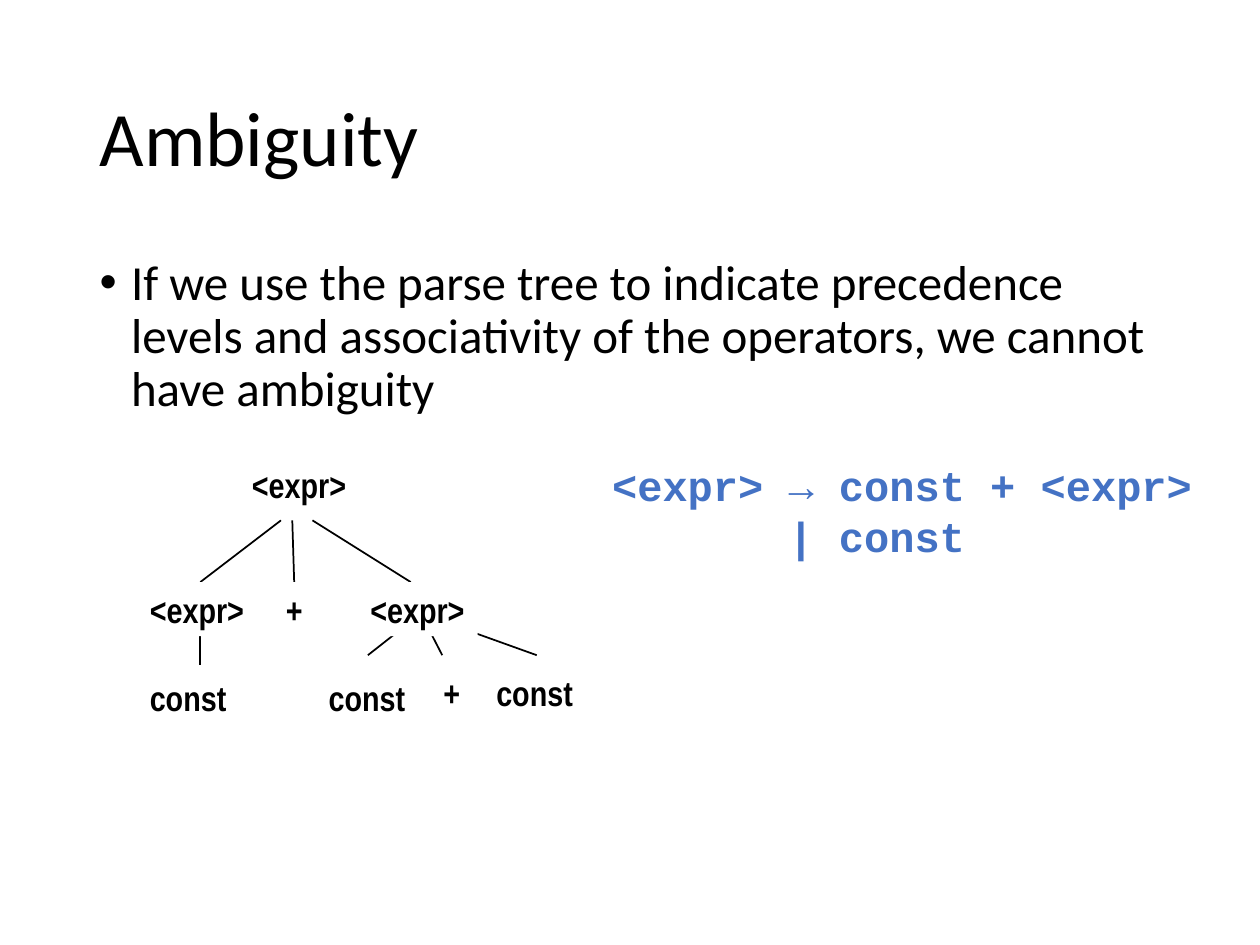
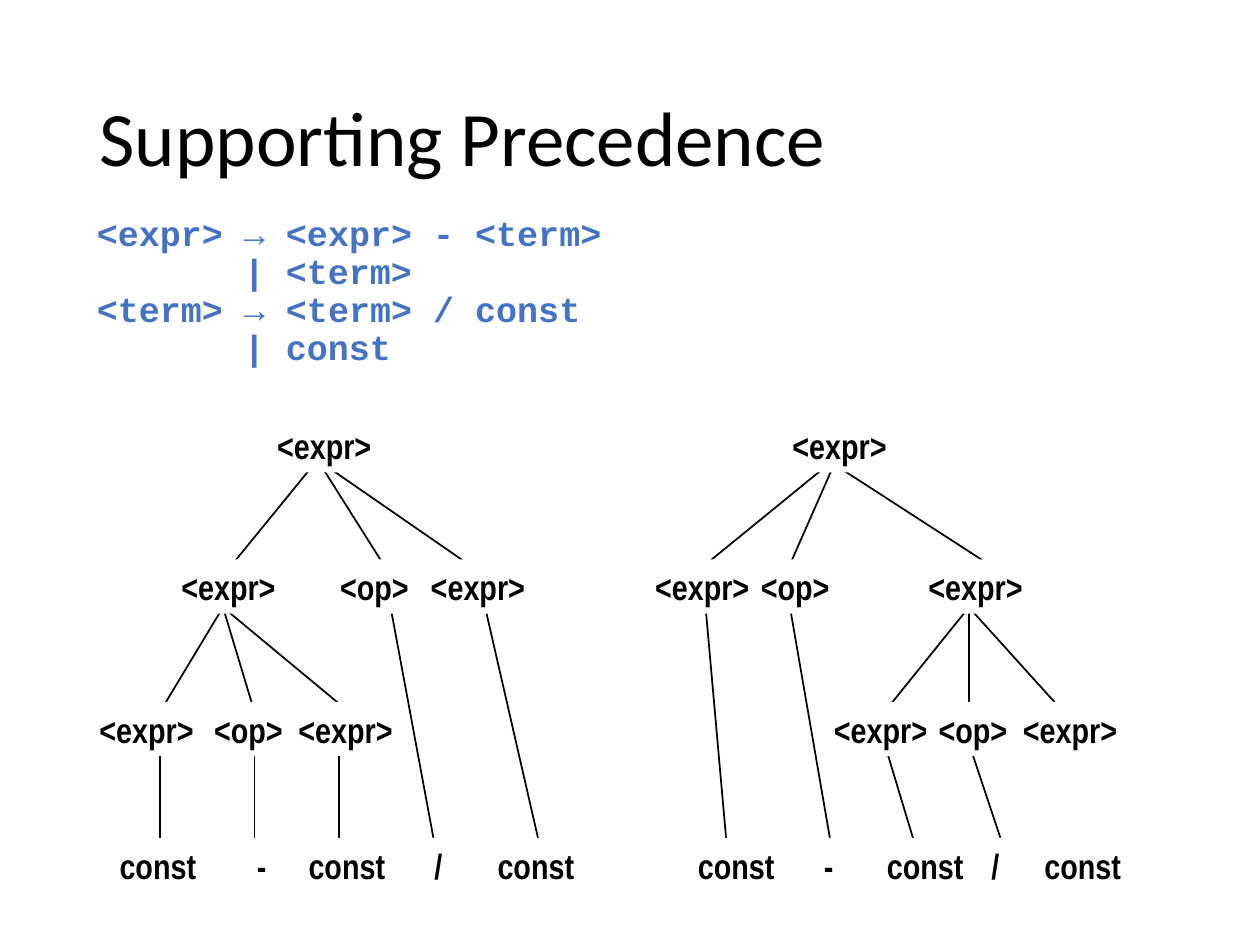
import pptx
import pptx.dml.color
import pptx.enum.shapes
import pptx.enum.text
import pptx.oxml
import pptx.oxml.ns
import pptx.util

Inches = pptx.util.Inches
Pt = pptx.util.Pt
COLORS = {"text": "000000", "grammar": "4472C4", "paper": "FFFFFF"}
FONTS = {"main": "Calibri", "code": "Courier New", "node": "Arial Narrow"}
NODE_WIDTHS = {"<expr>": 0.95, "<op>": 0.75, "const": 0.81, "+": 0.34, "-": 0.28, "/": 0.26}
NODE_HEIGHT = 0.43
LINE_WIDTH = 1
CODE_CHARACTER_WIDTH = 0.6
ALTERNATIVE_COLUMN = 7

SUM_TREE = {
    "rows": [
        (0, [("<expr>", 0.81)]),
        (0.99, [("<expr>", 0), ("<expr>", 1.75), ("+", 1.08)]),
        (1.69, [("const", 0), ("const", 1.42)]),
        (1.65, [("const", 2.75), ("+", 2.33)]),
    ],
    "branches": [
        ((1.14, 0.5), [(0.5, 0.99)]),
        ((1.39, 0.5), [(2.17, 0.99)]),
        ((1.23, 0.5), [(1.25, 1.15)]),
        ((0.5, 1.32), [(0.5, 1.65)]),
        ((2.25, 1.24), [(1.83, 1.57), (3.17, 1.57), (2.42, 1.57)]),
    ],
}
LEFT_DEEP_TREE = {
    "rows": [
        (0, [("<expr>", 1.41)]),
        (1.12, [("<expr>", 0.65), ("<expr>", 2.63), ("<op>", 1.91)]),
        (2.25, [("<expr>", 0), ("<expr>", 1.58), ("<op>", 0.91)]),
        (3.33, [("const", 0.16), ("-", 1.25), ("const", 1.66), ("/", 2.66), ("const", 3.16)]),
    ],
    "branches": [
        ((1.83, 0.33), [(1.08, 1.25), (3.16, 1.25), (2.41, 1.25)]),
        ((1.08, 1.5), [(0.58, 2.33), (2.08, 2.33), (1.33, 2.33)]),
        ((0.58, 2.58), [(0.58, 3.41)]),
        ((1.33, 2.58), [(1.33, 3.41)]),
        ((2, 2.58), [(2, 3.41)]),
        ((2.41, 1.5), [(2.75, 3.33)]),
        ((3.16, 1.5), [(3.58, 3.33)]),
    ],
}
RIGHT_DEEP_TREE = {
    "rows": [
        (0, [("<expr>", 1.09)]),
        (1.12, [("<expr>", 0), ("<expr>", 2.17), ("<op>", 0.84)]),
        (2.25, [("<expr>", 1.42), ("<expr>", 2.92), ("<op>", 2.25)]),
        (3.33, [("const", 0.34), ("-", 1.34), ("const", 1.84), ("/", 2.67), ("const", 3.09)]),
    ],
    "branches": [
        ((1.42, 0.41), [(0.5, 1.16)]),
        ((1.59, 0.41), [(2.75, 1.16)]),
        ((1.5, 0.41), [(1.17, 1.16)]),
        ((2.59, 1.5), [(1.92, 2.33), (3.34, 2.33), (2.59, 2.33)]),
        ((0.5, 1.5), [(0.67, 3.41)]),
        ((1.17, 1.5), [(1.5, 3.41)]),
        ((1.92, 2.58), [(2.17, 3.41)]),
        ((2.59, 2.58), [(2.84, 3.33)]),
    ],
}


def rgb(name):
    """Return the named palette colour."""
    return pptx.dml.color.RGBColor.from_string(COLORS[name])


def write_text(paragraph, text, size, font="main", color="text", bold=False,
               line_spacing=1.0, space_before=0, margin=0, hanging=0):
    """Write one formatted run and set the layout of its paragraph."""
    paragraph.alignment = pptx.enum.text.PP_ALIGN.LEFT
    paragraph.line_spacing = line_spacing
    paragraph.space_before = Pt(space_before)
    properties = paragraph._p.get_or_add_pPr()
    properties.set("marL", str(Inches(margin)))
    properties.set("indent", str(Inches(-hanging)))
    run = paragraph.add_run()
    run.text = text
    run.font.size = Pt(size)
    run.font.name = FONTS[font]
    run.font.bold = bold
    run.font.color.rgb = rgb(color)


def place(shape, left, top, width, height):
    """Move and size a shape in inches."""
    shape.left, shape.top = Inches(left), Inches(top)
    shape.width, shape.height = Inches(width), Inches(height)


def add_titled_slide(presentation, layout_index, title):
    """Add a slide with the shared title style."""
    slide = presentation.slides.add_slide(presentation.slide_layouts[layout_index])
    shape = slide.shapes.title
    place(shape, 0.69, 0.4, 8.62, 1.45)
    shape.text_frame.vertical_anchor = pptx.enum.text.MSO_ANCHOR.MIDDLE
    shape.text_frame.auto_size = pptx.enum.text.MSO_AUTO_SIZE.NONE
    write_text(shape.text_frame.paragraphs[0], title, 44, line_spacing=0.9)
    return slide


def add_bullet(slide, text, left, top, width, height):
    """Fill the body placeholder with one bulleted statement."""
    body = slide.placeholders[1]
    place(body, left, top, width, height)
    body.text_frame.auto_size = pptx.enum.text.MSO_AUTO_SIZE.NONE
    write_text(body.text_frame.paragraphs[0], text, 28, line_spacing=0.9,
               space_before=10, margin=0.25, hanging=0.25)


def add_grammar(slide, rules, left, top, width, height, size, line_spacing):
    """Add grammar rules, aligning each alternative under its arrow."""
    box = slide.shapes.add_textbox(Inches(left), Inches(top), Inches(width), Inches(height))
    frame = box.text_frame
    frame.word_wrap = True
    column = ALTERNATIVE_COLUMN * CODE_CHARACTER_WIDTH * size / 72
    for index, rule in enumerate(rules):
        paragraph = frame.add_paragraph() if index else frame.paragraphs[0]
        write_text(paragraph, rule, size, font="code", color="grammar", bold=True,
                   line_spacing=line_spacing, margin=column if rule.startswith("|") else 0)


def add_branch(slide, start, end):
    """Draw one thin line between two points in inches."""
    connector = slide.shapes.add_connector(
        pptx.enum.shapes.MSO_CONNECTOR.STRAIGHT, *map(Inches, start + end))
    connector.line.color.rgb = rgb("text")
    connector.line.width = Pt(LINE_WIDTH)
    properties = connector._element.spPr
    properties.append(pptx.oxml.parse_xml("<a:effectLst %s/>" % pptx.oxml.ns.nsdecls("a")))


def add_node(slide, text, left, top):
    """Add one white tree node with a bold label."""
    node = slide.shapes.add_shape(
        pptx.enum.shapes.MSO_SHAPE.RECTANGLE, Inches(left), Inches(top),
        Inches(NODE_WIDTHS[text]), Inches(NODE_HEIGHT))
    node.shadow.inherit = False
    node.fill.solid()
    node.fill.fore_color.rgb = rgb("paper")
    node.line.fill.background()
    frame = node.text_frame
    frame.word_wrap = False
    frame.auto_size = pptx.enum.text.MSO_AUTO_SIZE.SHAPE_TO_FIT_TEXT
    frame.vertical_anchor = pptx.enum.text.MSO_ANCHOR.TOP
    write_text(frame.paragraphs[0], text, 20, font="node", bold=True)


def add_parse_tree(slide, tree, left, top):
    """Draw the branches of a parse tree, then its nodes over them."""
    for (start_x, start_y), ends in tree["branches"]:
        for end_x, end_y in ends:
            add_branch(slide, (left + start_x, top + start_y), (left + end_x, top + end_y))
    for row_top, nodes in tree["rows"]:
        for text, node_left in nodes:
            add_node(slide, text, left + node_left, top + row_top)


def build_ambiguity(presentation):
    """Build the slide on ambiguity."""
    slide = add_titled_slide(presentation, 1, "Ambiguity")
    add_bullet(slide, "If we use the parse tree to indicate precedence levels and "
               "associativity of the operators, we cannot have ambiguity", 0.69, 2, 8.62, 4.76)
    add_grammar(slide, ["<expr> → const + <expr>", "| const"], 4.76, 3.6, 5, 0.91,
                size=24, line_spacing=1.0)
    add_parse_tree(slide, SUM_TREE, 1.09, 3.63)


def build_precedence(presentation):
    """Build the slide on supporting precedence."""
    slide = add_titled_slide(presentation, 5, "Supporting Precedence")
    rules = ["<expr> → <expr> - <term>", "| <term>", "<term> → <term> / const", "| const"]
    add_grammar(slide, rules, 0.67, 1.67, 8.17, 5.17, size=20, line_spacing=0.9)
    add_parse_tree(slide, LEFT_DEEP_TREE, 0.69, 3.32)
    add_parse_tree(slide, RIGHT_DEEP_TREE, 5.1, 3.32)


def main():
    """Build and save the presentation."""
    presentation = pptx.Presentation()
    presentation.slide_width, presentation.slide_height = Inches(10), Inches(7.5)
    build_ambiguity(presentation)
    build_precedence(presentation)
    presentation.save("out.pptx")


if __name__ == "__main__":
    main()
